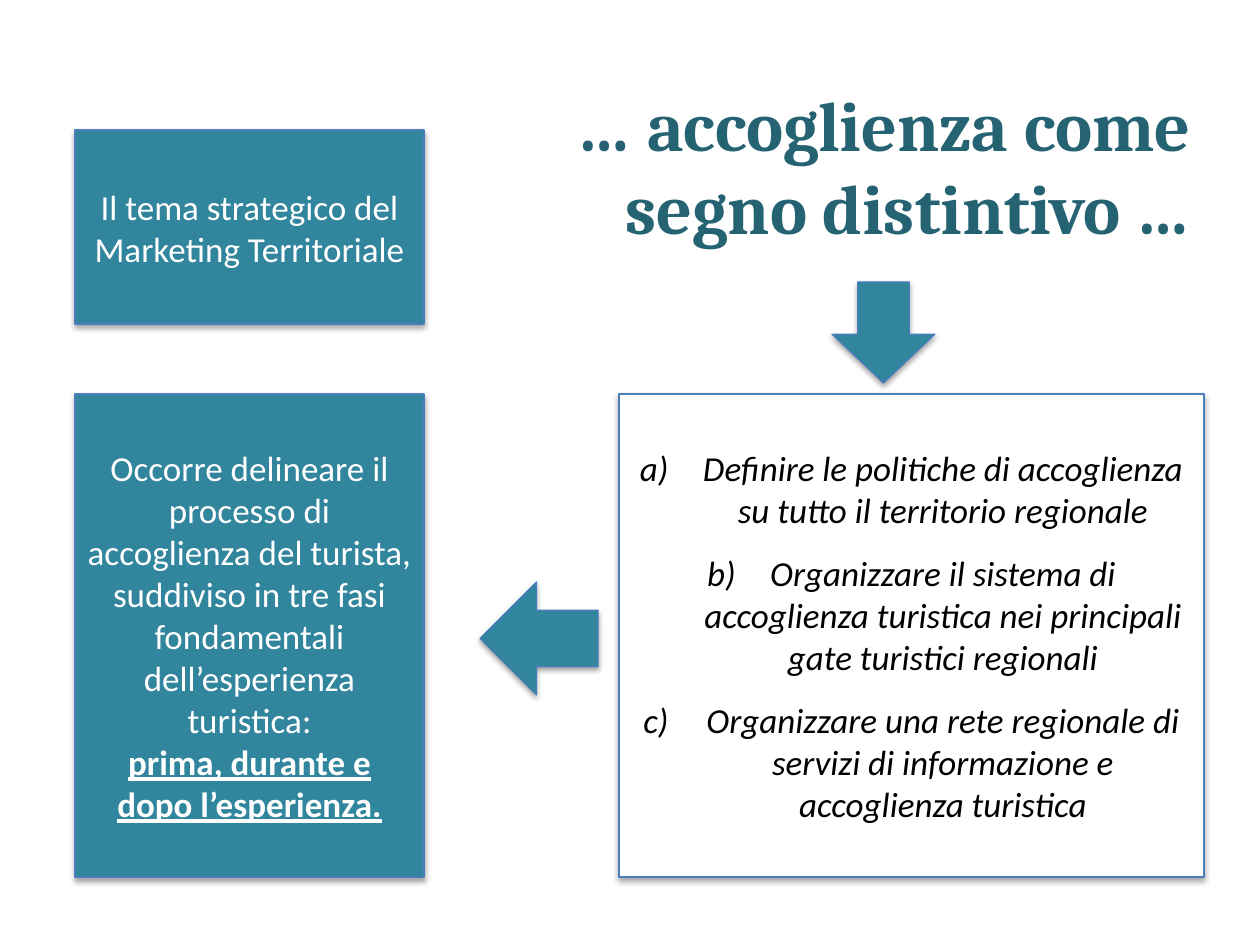
from dataclasses import dataclass

from lxml import etree
from pptx import Presentation
from pptx import util as u
from pptx.dml.color import RGBColor
from pptx.enum import shapes, text
from pptx.oxml.ns import qn

SCALE = 914400 / 126


@dataclass(frozen=True)
class Theme:
    teal: str = "31859C"
    title: str = "256373"
    outline: str = "4B7EBC"
    white: str = "FFFFFF"
    black: str = "000000"
    heading_font: str = "Cambria"
    body_font: str = "Calibri"
    heading_size: int = 40
    body_size: int = 20


THEME = Theme()


def px(length):
    return u.Emu(round(length * SCALE))


def add_element(parent, tag, **attributes):
    element = etree.SubElement(parent, qn(tag))
    for name, value in attributes.items():
        element.set(name, str(value))
    return element


def add_shadow(shape):
    shape.shadow.inherit = False
    effects = shape._element.spPr.find(qn("a:effectLst"))
    shadow = add_element(effects, "a:outerShdw", blurRad=40000, dist=23000,
                         dir=5400000, rotWithShape=0)
    color = add_element(shadow, "a:srgbClr", val=THEME.black)
    add_element(color, "a:alpha", val=35000)


def style_paragraph(paragraph, font, size, color, alignment):
    paragraph.alignment = alignment
    paragraph.font.name = font
    paragraph.font.size = u.Pt(size)
    paragraph.font.color.rgb = RGBColor.from_string(color)


def add_block(slide, kind, box, fill=THEME.teal):
    shape = slide.shapes.add_shape(kind, *map(px, box))
    shape.fill.solid()
    shape.fill.fore_color.rgb = RGBColor.from_string(fill)
    shape.line.color.rgb = RGBColor.from_string(THEME.outline)
    shape.line.width = u.Pt(0.75)
    add_shadow(shape)
    return shape


def add_panel(slide, box, lines, fill=THEME.teal, color=THEME.white):
    frame = add_block(slide, shapes.MSO_SHAPE.RECTANGLE, box, fill).text_frame
    frame.word_wrap = True
    frame.vertical_anchor = text.MSO_ANCHOR.MIDDLE
    frame.text = "\n".join(lines)
    for paragraph in frame.paragraphs:
        style_paragraph(paragraph, THEME.body_font, THEME.body_size, color,
                        text.PP_ALIGN.CENTER)
    return frame.paragraphs


def add_title(slide, box, wording):
    title = slide.shapes.title
    title.left, title.top, title.width, title.height = map(px, box)
    frame = title.text_frame
    frame.text = wording
    frame.word_wrap = True
    frame.auto_size = text.MSO_AUTO_SIZE.NONE
    frame.vertical_anchor = text.MSO_ANCHOR.MIDDLE
    paragraph = frame.paragraphs[0]
    style_paragraph(paragraph, THEME.heading_font, THEME.heading_size,
                    THEME.title, text.PP_ALIGN.RIGHT)
    paragraph.font.bold = True


def add_process(slide, box):
    paragraphs = add_panel(slide, box, [
        "Occorre delineare il processo di accoglienza del turista, suddiviso "
        "in tre fasi fondamentali dell’esperienza turistica:",
        "prima, durante e dopo l’esperienza.",
    ])
    paragraphs[-1].font.bold = True
    paragraphs[-1].font.underline = True


def add_goals(slide, box):
    paragraphs = add_panel(slide, box, [
        "Definire le politiche di accoglienza su tutto il territorio regionale",
        "Organizzare il sistema di accoglienza turistica nei principali gate "
        "turistici regionali",
        "Organizzare una rete regionale di servizi di informazione e "
        "accoglienza turistica",
    ], THEME.white, THEME.black)
    for paragraph in paragraphs:
        paragraph.font.italic = True
        paragraph.space_before = paragraph.space_after = u.Pt(6)
        properties = paragraph._p.get_or_add_pPr()
        properties.set("marL", str(u.Inches(0.5)))
        properties.set("indent", str(-u.Inches(0.5)))
        numbering = etree.Element(qn("a:buAutoNum"), type="alphaLcParenR")
        properties.find(qn("a:defRPr")).addprevious(numbering)


def add_arrows(slide, box):
    left, top, width, height = box
    down = add_block(slide, shapes.MSO_SHAPE.DOWN_ARROW,
                     (left + 213, top - 112, 103, 101))
    down.adjustments[1] = 0.483
    add_block(slide, shapes.MSO_SHAPE.LEFT_ARROW,
              (left - 139, top + 188, 118, 113))


def main():
    presentation = Presentation()
    presentation.slide_width, presentation.slide_height = px(1260), px(945)
    slide = presentation.slides.add_slide(presentation.slide_layouts[5])
    goals_box = (619, 394, 585, 483)
    add_title(slide, (501, 34, 702, 262), "… accoglienza come segno distintivo …")
    add_process(slide, (75, 394, 349, 483))
    add_goals(slide, goals_box)
    add_panel(slide, (75, 130, 349, 194),
              ["Il tema strategico del Marketing Territoriale"])
    add_arrows(slide, goals_box)
    presentation.save("out.pptx")


if __name__ == "__main__":
    main()
